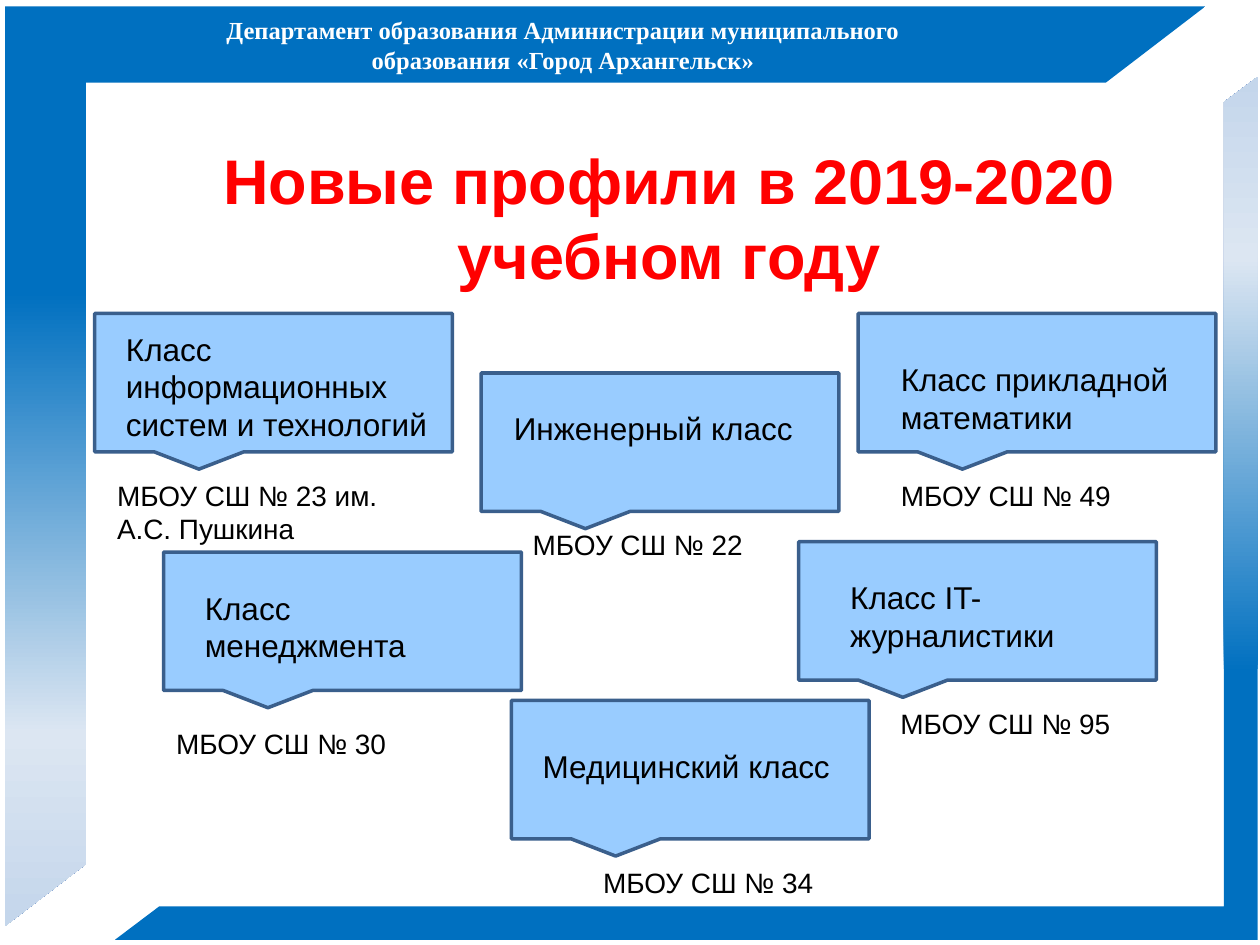
from dataclasses import dataclass

from lxml import etree
from pptx import Presentation
from pptx.dml.color import RGBColor
from pptx.enum.shapes import MSO_SHAPE
from pptx.enum.text import PP_ALIGN
from pptx.oxml.ns import qn
from pptx.util import Cm, Pt

HALF_FRAME = MSO_SHAPE.HALF_FRAME
CALLOUT = MSO_SHAPE.RECTANGULAR_CALLOUT
LEFT = PP_ALIGN.LEFT
CENTER = PP_ALIGN.CENTER

FRAME_STOPS = [(31, "0070C0"), (79, "DCE6F2"), (100, "C4D6EB"), (100, "FFEBFA")]
CALLOUT_WIDTH, CALLOUT_HEIGHT = 7.21, 2.79
SCHOOL_WIDTH = 6


@dataclass
class Profile:
    left: float
    top: float
    name: str
    name_box: tuple
    school: str
    school_offset: tuple


PROFILES = [
    Profile(1.91, 6.32, "Класс информационных систем и технологий", (0.38, 0.2, 6.81, 2.57),
            "МБОУ СШ № 23 им. А.С. Пушкина", (0.2, 3.2)),
    Profile(9.7, 7.52, "Инженерный класс", (0.41, 0.61, 6.4, 1.02),
            "МБОУ СШ № 22", (0.79, 3)),
    Profile(17.3, 6.32, "Класс прикладной математики", (0.61, 0.81, 6.2, 1.8),
            "МБОУ СШ № 49", (0.61, 3.2)),
    Profile(3.3, 11.13, "Класс менеджмента", (0.58, 0.61, 6, 1.8),
            "МБОУ СШ № 30", (0, 3.4)),
    Profile(16.1, 10.92, "Класс IT- журналистики", (0.79, 0.61, 6, 1.8),
            "МБОУ СШ № 95", (1.8, 3.2)),
    Profile(10.31, 14.12, "Медицинский класс", (0.38, 0.81, 6.4, 1.02),
            "МБОУ СШ № 34", (1.6, 3.2)),
]


def color(value):
    return RGBColor.from_string(value)


def add_text(slide, box, text, size, ink="000000", font="Arial", bold=False, align=LEFT):
    frame = slide.shapes.add_textbox(*map(Cm, box)).text_frame
    frame.word_wrap = True
    paragraph = frame.paragraphs[0]
    paragraph.alignment = align
    run = paragraph.add_run()
    run.text = text
    run.font.name = font
    run.font.size = Pt(size)
    run.font.bold = bold
    run.font.color.rgb = color(ink)


def add_frame(slide, box, thickness, rotation=0):
    frame = slide.shapes.add_shape(HALF_FRAME, *map(Cm, box))
    frame.shadow.inherit = False
    frame.rotation = rotation
    frame.adjustments[0], frame.adjustments[1] = thickness
    frame.line.fill.background()
    frame.fill.gradient()
    frame.fill.gradient_angle = 270
    stops = frame.element.spPr.find(qn("a:gradFill")).find(qn("a:gsLst"))
    for stop in list(stops):
        stops.remove(stop)
    for position, shade in FRAME_STOPS:
        stop = etree.SubElement(stops, qn("a:gs"), pos=str(position * 1000))
        etree.SubElement(stop, qn("a:srgbClr"), val=shade)


def add_header(slide, left, top):
    add_frame(slide, (left, top, 24.2, 18.54), (0.083, 0.088))
    add_text(slide, (left + 3.1, top + 0.05, 16.3, 1.42),
             "Департамент образования Администрации муниципального "
             "образования «Город Архангельск»",
             14, "FFFFFF", "Times New Roman", True, CENTER)


def add_profile(slide, profile):
    left, top = profile.left, profile.top
    callout = slide.shapes.add_shape(
        CALLOUT, Cm(left), Cm(top), Cm(CALLOUT_WIDTH), Cm(CALLOUT_HEIGHT))
    callout.shadow.inherit = False
    callout.fill.solid()
    callout.fill.fore_color.rgb = color("99CCFF")
    callout.line.color.rgb = color("3A5F8C")
    callout.line.width = Pt(2)
    dx, dy, width, height = profile.name_box
    add_text(slide, (left + dx, top + dy, width, height), profile.name, 18)
    dx, dy = profile.school_offset
    add_text(slide, (left + dx, top + dy, SCHOOL_WIDTH, 0.94), profile.school, 16)


def main():
    deck = Presentation()
    deck.slide_width, deck.slide_height = Cm(25.4), Cm(19.05)
    slide = deck.slides.add_slide(deck.slide_layouts[6])
    add_header(slide, 0.1, 0.13)
    add_frame(slide, (2.31, 1.55, 23.04, 17.4), (0.039, 0.039), 180)
    add_text(slide, (3.89, 2.72, 19.2, 3.33), "Новые профили в 2019-2020 учебном году",
             36, "FF0000", bold=True, align=CENTER)
    for profile in PROFILES:
        add_profile(slide, profile)
    deck.save("out.pptx")


if __name__ == "__main__":
    main()
